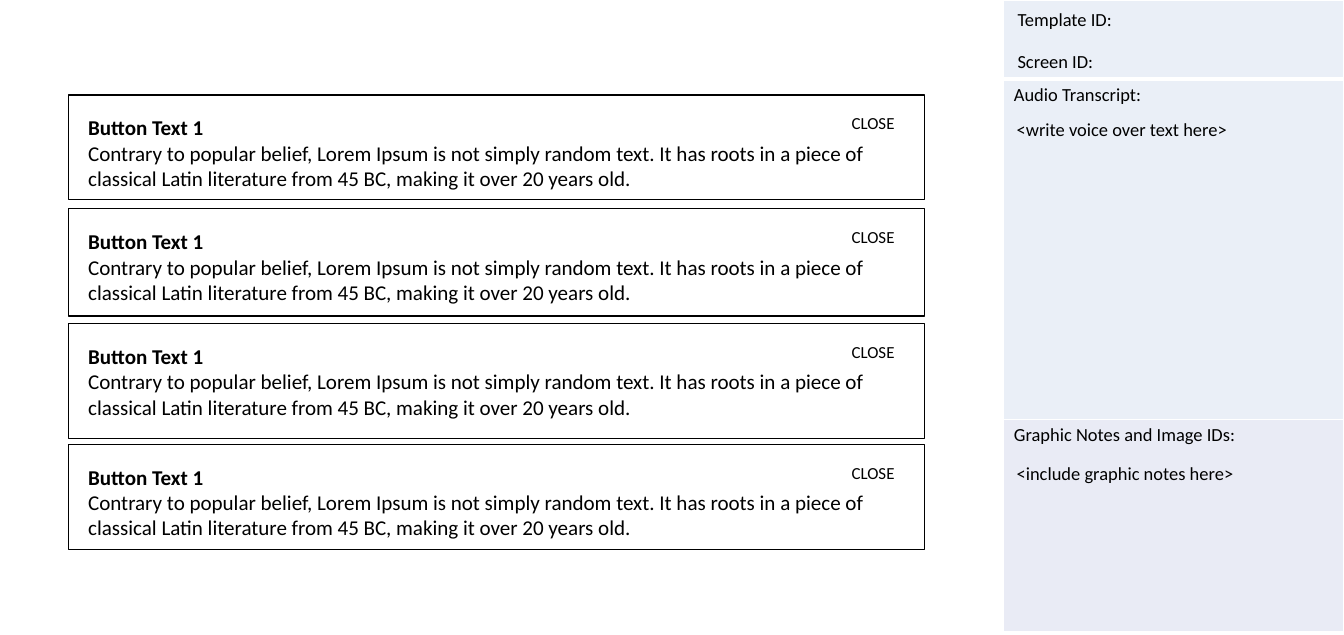
import pptx
import pptx.util
import pptx.dml.color
import pptx.enum.shapes
import pptx.enum.text
import pptx.oxml
import pptx.oxml.ns

Inches = pptx.util.Inches
Pt = pptx.util.Pt
BODY = ("Contrary to popular belief, Lorem Ipsum is not simply random text. "
        "It has roots in a piece of classical Latin literature from 45 BC, "
        "making it over 20 years old.")


def paint(color, value):
    color.rgb = pptx.dml.color.RGBColor.from_string(value)


def fill(part, value):
    part.fill.solid()
    paint(part.fill.fore_color, value)


def style(para, size, bold=False):
    for run in para.runs:
        run.font.name = "Calibri"
        run.font.size = Pt(size)
        run.font.bold = bold
        paint(run.font.color, "000000")


def label(slide, text, left, top, width, height, size=14):
    box = slide.shapes.add_textbox(
        Inches(left), Inches(top), Inches(width), Inches(height))
    frame = box.text_frame
    frame.word_wrap = True
    frame.auto_size = pptx.enum.text.MSO_AUTO_SIZE.SHAPE_TO_FIT_TEXT
    frame.text = text
    style(frame.paragraphs[0], size)


def border(cell, top, base):
    props = cell._tc.get_or_add_tcPr()
    sides = (("L", 1), ("R", 1), ("T", top), ("B", base))
    for spot, (side, width) in enumerate(sides):
        line = pptx.oxml.parse_xml(
            f'<a:ln{side} {pptx.oxml.ns.nsdecls("a")} w="{Pt(width)}">'
            f'<a:solidFill><a:srgbClr val="FFFFFF"/></a:solidFill></a:ln{side}>')
        props.insert(spot, line)


def sidebar(slide, left, top, width):
    rows = (("", 0.83, "EAEFF7", 1, 3),
            ("Audio Transcript:", 3.59, "EAEFF7", 3, 1),
            ("Graphic Notes and Image IDs:", 2.23, "E9EBF5", 1, 1))
    height = sum(row[1] for row in rows)
    table = slide.shapes.add_table(
        len(rows), 1, Inches(left), Inches(top), Inches(width), Inches(height)).table
    table.first_row = False
    table.horz_banding = False
    for index, (text, tall, shade, upper, lower) in enumerate(rows):
        table.rows[index].height = Inches(tall)
        cell = table.cell(index, 0)
        cell.margin_left = cell.margin_right = Inches(0.11)
        cell.margin_top = cell.margin_bottom = Inches(0.05)
        cell.text = text
        style(cell.text_frame.paragraphs[0], 14)
        fill(cell, shade)
        border(cell, upper, lower)
    notes = (("Screen ID:", 0.05, 0.48),
             ("Template ID:", 0.05, 0.04),
             ("<write voice over text here>", 0.04, 1.19),
             ("<include graphic notes here>", 0.04, 4.82))
    for text, inset, drop in notes:
        label(slide, text, left + inset, top + drop, width - inset, 0.34)


def panel(slide, left, top, width, height):
    box = slide.shapes.add_shape(
        pptx.enum.shapes.MSO_SHAPE.RECTANGLE,
        Inches(left), Inches(top), Inches(width), Inches(height))
    box.shadow.inherit = False
    fill(box, "FFFFFF")
    paint(box.line.color, "000000")
    box.line.width = Pt(1)
    frame = box.text_frame
    frame.word_wrap = True
    frame.vertical_anchor = pptx.enum.text.MSO_ANCHOR.TOP
    frame.margin_left = frame.margin_right = Inches(0.21)
    frame.margin_top = frame.margin_bottom = Inches(0.21)
    frame.text = "Button Text 1\n" + BODY
    for para, bold in zip(frame.paragraphs, (True, False)):
        para.alignment = pptx.enum.text.PP_ALIGN.LEFT
        style(para, 16, bold)
    label(slide, "CLOSE", left + width - 0.87, top + 0.14, 0.87, 0.32, 12.8)


def main():
    deck = pptx.Presentation()
    deck.slide_width = Inches(14.17)
    deck.slide_height = Inches(6.69)
    slide = deck.slides.add_slide(deck.slide_layouts[6])
    sidebar(slide, 10.58, 0, 3.59)
    for top, height in ((1, 1.1), (2.2, 1.13), (3.41, 1.21), (4.68, 1.11)):
        panel(slide, 0.72, top, 9.03, height)
    deck.save("out.pptx")


if __name__ == "__main__":
    main()
